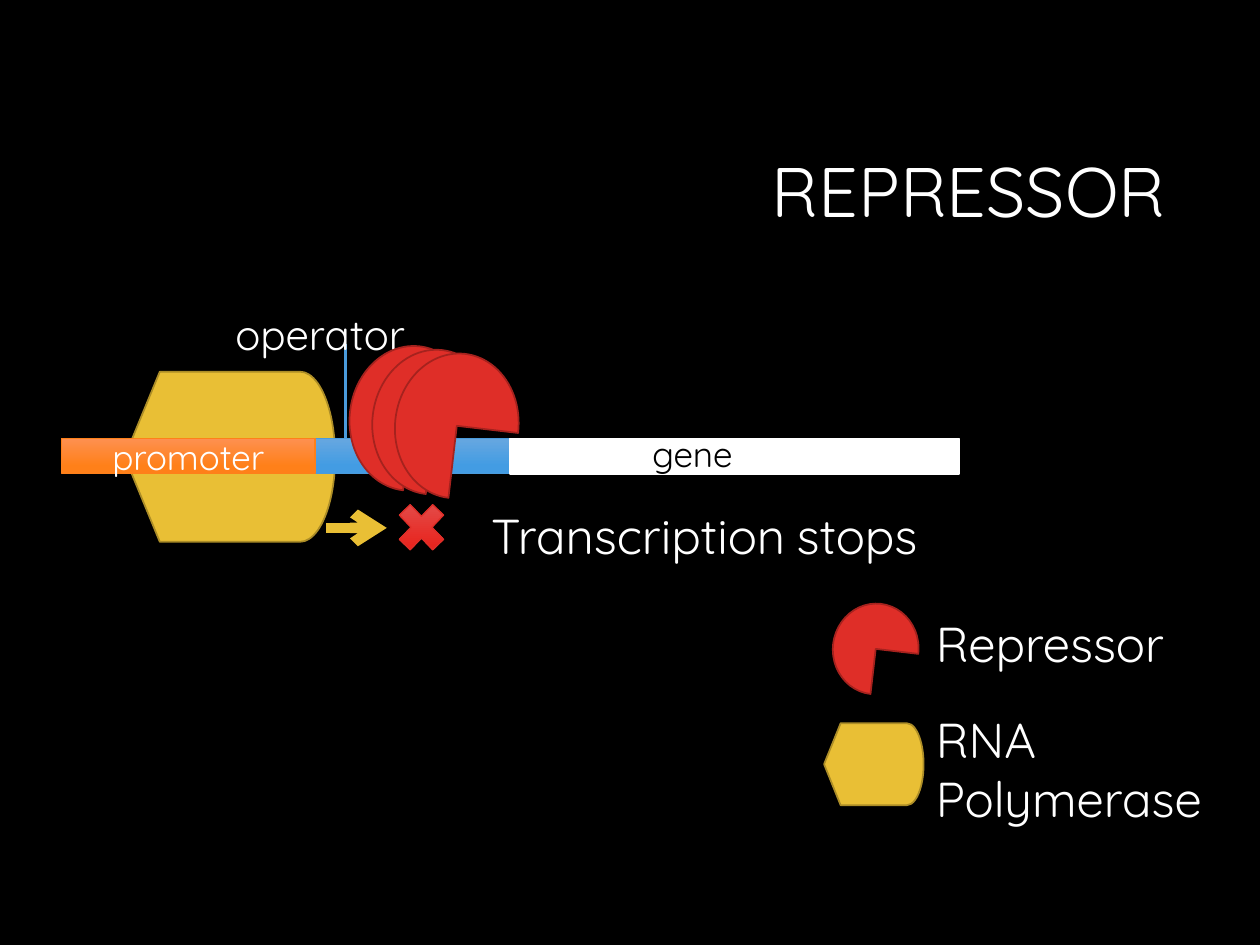
import pptx
import pptx.dml.color
import pptx.enum.shapes
import pptx.enum.text
import pptx.oxml
import pptx.oxml.ns
import pptx.util

RGBColor = pptx.dml.color.RGBColor
BLACK = RGBColor(0x00, 0x00, 0x00)
WHITE = RGBColor(0xFF, 0xFF, 0xFF)
RED = RGBColor(0xDF, 0x2E, 0x28)
DARK_RED = RGBColor(0xA5, 0x22, 0x1E)
CROSS_TOP = RGBColor(0xE2, 0x54, 0x52)
CROSS_BOTTOM = RGBColor(0xE8, 0x25, 0x1F)
YELLOW = RGBColor(0xE9, 0xBF, 0x35)
DARK_YELLOW = RGBColor(0xAC, 0x8D, 0x27)
BLUE = RGBColor(0x4A, 0x9B, 0xDC)
BLUE_TOP = RGBColor(0x66, 0xA7, 0xE0)
BLUE_BOTTOM = RGBColor(0x43, 0x9C, 0xE3)
ORANGE = RGBColor(0xFE, 0x80, 0x1A)
ORANGE_TOP = RGBColor(0xFE, 0x90, 0x4F)
ORANGE_BOTTOM = RGBColor(0xFF, 0x80, 0x19)

FONT = "Quicksand"
KIND = pptx.enum.shapes.MSO_SHAPE
ALIGN = pptx.enum.text.PP_ALIGN
MIDDLE = pptx.enum.text.MSO_ANCHOR.MIDDLE
PIE_TURN = 96.6

presentation = pptx.Presentation()
presentation.slide_width = pptx.util.Inches(10)
presentation.slide_height = pptx.util.Inches(7.5)
COLUMN = presentation.slide_width / 100
ROW = presentation.slide_height / 75

slide = presentation.slides.add_slide(presentation.slide_layouts[6])
slide.background.fill.solid()
slide.background.fill.fore_color.rgb = BLACK
shapes = slide.shapes


def add_figure(kind, left, top, width, height, colours, outline, weight=1, turn=0):
    """Add a preset shape; two colours make a gradient running downwards."""
    shape = shapes.add_shape(kind, int(left * COLUMN), int(top * ROW),
                             int(width * COLUMN), int(height * ROW))
    shape.shadow.inherit = False
    shape.rotation = turn
    if len(colours) == 1:
        shape.fill.solid()
        shape.fill.fore_color.rgb = colours[0]
    else:
        shape.fill.gradient()
        shape.fill.gradient_angle = 270
        for stop, colour, position in zip(shape.fill.gradient_stops, colours, (0, 0.78)):
            stop.color.rgb = colour
            stop.position = position
    shape.line.color.rgb = outline
    shape.line.width = pptx.util.Pt(weight)
    return shape


def write(shape, runs, colour=WHITE, frame_format=None, paragraph_format=None):
    """Fill a shape with one paragraph made of (text, size) runs."""
    frame = shape.text_frame
    paragraph = frame.paragraphs[0]
    for target, values in ((frame, {"word_wrap": True, **(frame_format or {})}),
                           (paragraph, paragraph_format or {})):
        for attribute, value in values.items():
            setattr(target, attribute, value)
    for text, size in runs:
        run = paragraph.add_run()
        run.text = text
        run.font.color.rgb = colour
        for attribute, value in {"name": FONT, "size": pptx.util.Pt(size)}.items():
            setattr(run.font, attribute, value)


# Polymerase on the strand and in the legend
for frame in ((9.9, 29.5, 16.7, 13.5), (65.4, 57.4, 7.9, 6.5)):
    add_figure(KIND.FLOWCHART_DISPLAY, *frame, [YELLOW], DARK_YELLOW)

# DNA strand
STRAND_TOP, STRAND_HEIGHT = 34.8, 2.8
add_figure(KIND.RECTANGLE, 24.8, STRAND_TOP, 15.7, STRAND_HEIGHT,
           [BLUE_TOP, BLUE_BOTTOM], BLUE, 0.75)
add_figure(KIND.RECTANGLE, 40.5, STRAND_TOP, 35.6, STRAND_HEIGHT, [WHITE], WHITE)
promoter = add_figure(KIND.RECTANGLE, 4.9, STRAND_TOP, 20.1, STRAND_HEIGHT,
                      [ORANGE_TOP, ORANGE_BOTTOM], ORANGE, 0.75)
write(promoter, [("promoter", 20)], frame_format={"vertical_anchor": MIDDLE},
      paragraph_format={"alignment": ALIGN.CENTER})

# Operator pointer and transcription arrow
for start, end, colour, weight, head in (
    ((27.4, 34.8), (27.4, 27.3), BLUE, 1.5, False),
    ((25.9, 41.9), (30.7, 41.9), YELLOW, 6, True),
):
    connector = shapes.add_connector(
        pptx.enum.shapes.MSO_CONNECTOR.STRAIGHT,
        int(start[0] * COLUMN), int(start[1] * ROW),
        int(end[0] * COLUMN), int(end[1] * ROW))
    connector.line.color.rgb = colour
    connector.line.width = pptx.util.Pt(weight)
    properties = connector._element.spPr
    properties.append(pptx.oxml.parse_xml(
        f'<a:effectLst {pptx.oxml.ns.nsdecls("a")}/>'))
    if head:
        connector.line._get_or_add_ln().append(pptx.oxml.parse_xml(
            f'<a:tailEnd {pptx.oxml.ns.nsdecls("a")} type="arrow"/>'))

# Text boxes: frame, runs, colour, frame format, paragraph format
unwrapped = {"word_wrap": False}
for frame, runs, colour, frame_format, paragraph_format in (
    ((1.2, 8.4, 92.3, 14.1), [("REPRESSOR", 40)], WHITE,
     {"vertical_anchor": MIDDLE}, {"alignment": ALIGN.RIGHT, "line_spacing": 0.9}),
    ((17.7, 24, 16.4, 5), [("operator", 24)], WHITE, unwrapped, {}),
    ((50.8, 33.8, 25.2, 4.4), [("gene", 20)], BLACK, {}, {}),
    ((38, 39.6, 36.2, 5.7), [("Transcription", 28), (" ", 24), ("stops", 28)],
     WHITE, unwrapped, {}),
    ((73.3, 48.2, 21.6, 5.7), [("Repressor", 28)], WHITE, {}, {}),
    ((73.3, 55.8, 24.8, 10.4), [("RNA Polymerase", 28)], WHITE, {}, {}),
):
    left, top, width, height = frame
    box = shapes.add_textbox(int(left * COLUMN), int(top * ROW),
                             int(width * COLUMN), int(height * ROW))
    write(box, runs, colour, frame_format, paragraph_format)

# Repressors: three stacked on the operator, one in the legend
stack = [(26.9 + 1.8 * step, 28.3 + 0.3 * step, 11.5, 9.8) for step in range(3)]
for frame in stack + [(65.9, 48.1, 7.2, 6.8)]:
    add_figure(KIND.PIE, *frame, [RED], DARK_RED, turn=PIE_TURN)

add_figure(KIND.MATH_MULTIPLY, 30.9, 39.2, 5.1, 5.3, [CROSS_TOP, CROSS_BOTTOM], RED, 0.75)

presentation.save("out.pptx")
